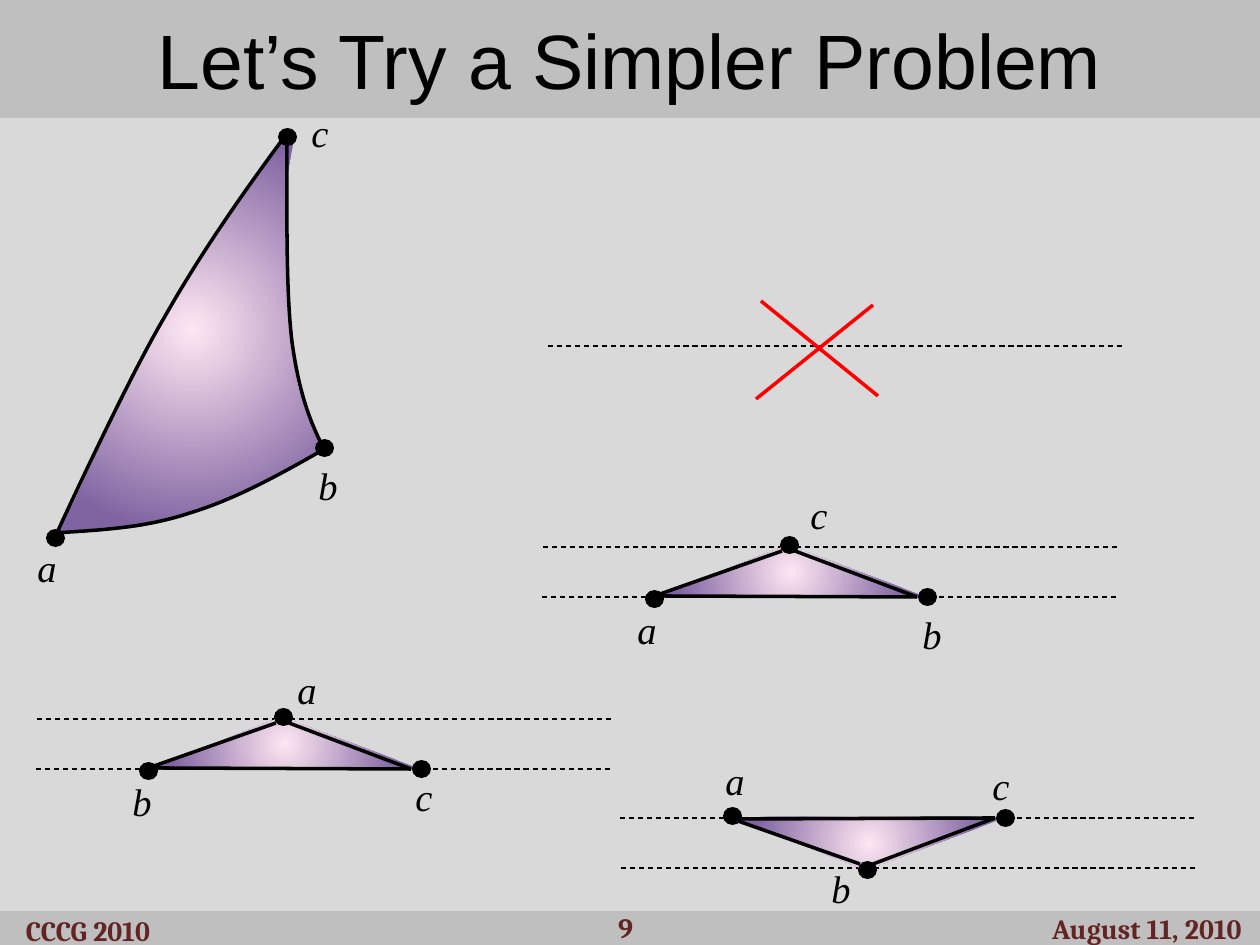
import dataclasses
import typing

import pptx
import pptx.dml.color
import pptx.enum.dml
import pptx.enum.shapes
import pptx.enum.text
import pptx.oxml
import pptx.oxml.ns
import pptx.util

RGB = pptx.dml.color.RGBColor
BLACK = RGB(0x00, 0x00, 0x00)
RED = RGB(0xFF, 0x00, 0x00)
PAPER = RGB(0xD9, 0xD9, 0xD9)
BAND = RGB(0xBF, 0xBF, 0xBF)
MAROON = RGB(0x63, 0x25, 0x23)
PINK = RGB(0xFE, 0xE7, 0xF2)
PURPLE = RGB(0x80, 0x64, 0xA2)

SCALE = 914400 / 126
WIDE, HIGH = 1260, 945
DASH = pptx.enum.dml.MSO_LINE.DASH
KIND = pptx.enum.shapes.MSO_SHAPE
ALIGN = pptx.enum.text.PP_ALIGN
MIDDLE = pptx.enum.text.MSO_ANCHOR.MIDDLE
SPACE = pptx.oxml.ns.nsdecls("a")
Point = tuple[int, int]


@dataclasses.dataclass(frozen=True)
class Label:
    text: str
    left: int
    top: int


@dataclasses.dataclass(frozen=True)
class Wedge:
    left: int
    base: int
    flip: int
    labels: tuple[Label, ...]


@dataclasses.dataclass(frozen=True)
class Note:
    text: str
    left: int
    top: int
    width: int
    height: int


WEDGES = (
    Wedge(653, 598, 1, (Label("a", 625, 600), Label("b", 910, 605), Label("c", 798, 485))),
    Wedge(147, 770, 1, (Label("b", 120, 772), Label("c", 403, 767), Label("a", 285, 660))),
    Wedge(731, 817, -1, (Label("a", 713, 751), Label("c", 980, 756), Label("b", 819, 859))),
)
NOTES = (
    Note("CCCG 2010", -42, 908, 260, 44),
    Note("August 11, 2010", 1002, 906, 290, 44),
)
NUMBER = Note(" 9", 512, 910, 221, 35)
BODY = (
    (286, 137), (270, 154), (213, 239), (188, 278), (163, 318), (154, 339), (135, 374),
    (117, 409), (92, 465), (79, 491), (66, 517), (62, 523), (58, 530),
    (55, 538), (55, 534), (60, 534), (68, 533), (76, 532), (84, 532),
    (98, 530), (120, 530), (139, 527), (159, 523), (179, 519), (203, 509),
    (228, 500), (266, 480), (286, 470), (306, 460), (318, 452), (324, 447),
    (329, 444), (323, 450), (320, 444), (316, 438), (311, 425), (306, 412),
    (302, 399), (297, 391), (294, 367), (290, 343), (287, 302), (286, 271),
    (285, 239), (287, 202), (287, 179), (289, 156), (302, 121), (286, 137),
)
CURVES = (
    ((285, 136), (243, 193), (202, 251), (164, 318), (125, 384), (55, 537), (55, 537)),
    ((55, 533), (101, 530), (145, 528), (190, 513), (236, 499), (281, 474), (328, 447)),
    ((323, 447), (310, 421), (299, 393), (292, 341), (286, 291), (287, 216), (287, 140)),
)
CORNERS = ((287, 137), (55, 538), (324, 448))
NAMES = (Label("a", 25, 538), Label("b", 306, 456), Label("c", 299, 103))


def px(size: float) -> pptx.util.Emu:
    return pptx.util.Emu(round(size * SCALE))


def bend(shape) -> None:
    tag = pptx.oxml.ns.qn("a:lnTo")
    steps = list(shape._element.spPr.iter(tag))
    for start in range(0, len(steps), 3):
        curve = pptx.oxml.parse_xml(f"<a:cubicBezTo {SPACE}/>")
        steps[start].addprevious(curve)
        for step in steps[start:start + 3]:
            curve.append(step[0])
            step.getparent().remove(step)


def add_path(slide, points: typing.Sequence[Point], close: bool, curved: bool):
    first, *rest = [(px(x), px(y)) for x, y in points]
    maker = slide.shapes.build_freeform(*first, scale=1.0)
    maker.add_line_segments(rest, close=close)
    shape = maker.convert_to_shape()
    shape.shadow.inherit = False
    if curved:
        bend(shape)
    return shape


def add_glow(slide, points: typing.Sequence[Point], curved: bool = False) -> None:
    shape = add_path(slide, points, True, curved)
    shape.line.fill.background()
    shape.fill.gradient()
    for stop, color, place in zip(shape.fill.gradient_stops, (PINK, PURPLE), (0, 0.82)):
        stop.color.rgb = color
        stop.position = place
    grad = shape._element.spPr.find(pptx.oxml.ns.qn("a:gradFill"))
    grad.replace(grad.find(pptx.oxml.ns.qn("a:lin")), pptx.oxml.parse_xml(
        f'<a:path {SPACE} path="circle">'
        '<a:fillToRect l="50000" t="50000" r="50000" b="50000"/></a:path>'))


def add_curve(slide, points: typing.Sequence[Point]) -> None:
    shape = add_path(slide, points, False, True)
    shape.fill.background()
    shape.line.color.rgb = BLACK
    shape.line.width = pptx.util.Pt(2)


def add_line(slide, start: Point, end: Point, color: RGB = BLACK, dashed: bool = False) -> None:
    line = slide.shapes.add_connector(
        pptx.enum.shapes.MSO_CONNECTOR.STRAIGHT, *map(px, (*start, *end)))
    line.line.color.rgb = color
    line.line.width = pptx.util.Pt(0.75 if dashed else 2)
    if dashed:
        line.line.dash_style = DASH
    line._element.spPr.append(pptx.oxml.parse_xml(f"<a:effectLst {SPACE}/>"))


def add_solid(slide, kind, box: tuple[int, ...], color: RGB) -> None:
    shape = slide.shapes.add_shape(kind, *map(px, box))
    shape.shadow.inherit = False
    shape.fill.solid()
    shape.fill.fore_color.rgb = color
    shape.line.fill.background()


def add_dot(slide, spot: Point) -> None:
    add_solid(slide, KIND.OVAL, (spot[0] - 9, spot[1] - 9, 19, 18), BLACK)


def style(line, name: str, size: int, color: RGB) -> None:
    line.font.name = name
    line.font.size = pptx.util.Pt(size)
    line.font.color.rgb = color


def add_label(slide, label: Label) -> None:
    frame = slide.shapes.add_textbox(*map(px, (label.left, label.top, 37, 59))).text_frame
    frame.word_wrap = True
    frame.text = label.text
    style(frame.paragraphs[0], "Times New Roman", 22, BLACK)
    frame.paragraphs[0].font.italic = True


def add_note(slide, note: Note, plain: bool = False) -> None:
    box = tuple(map(px, (note.left, note.top, note.width, note.height)))
    if plain:
        shape = slide.shapes.add_textbox(*box)
    else:
        shape = slide.shapes.add_shape(KIND.ROUNDED_RECTANGLE, *box)
        shape.shadow.inherit = False
        shape.fill.background()
        shape.line.fill.background()
    frame = shape.text_frame
    frame.word_wrap = True
    frame.vertical_anchor = MIDDLE
    frame.text = note.text
    line = frame.paragraphs[0]
    line.alignment = ALIGN.CENTER
    style(line, "Cambria", 16, MAROON)
    line.font.bold = True


def add_wedge(slide, wedge: Wedge) -> None:
    def at(x: int, y: int) -> Point:
        return wedge.left + x, wedge.base + wedge.flip * y

    for x, y in ((-110, -51), (-111, -1)):
        add_line(slide, at(x, y), at(x + 577, y), dashed=True)
    add_glow(slide, (at(0, 0), at(135, -53), at(276, 0)))
    for start, end in (((7, -4), (129, -47)), ((8, -2), (264, -1)), ((142, -47), (264, -1))):
        add_line(slide, at(*start), at(*end))
    for spot in ((1, 1), (136, -53), (274, -1)):
        add_dot(slide, at(*spot))
    for label in wedge.labels:
        add_label(slide, label)


def add_title(slide, text: str) -> None:
    title = slide.shapes.title
    title.left, title.top, title.width, title.height = map(px, (0, 0, WIDE, 118))
    title.fill.solid()
    title.fill.fore_color.rgb = BAND
    frame = title.text_frame
    frame.text = text
    frame.auto_size = pptx.enum.text.MSO_AUTO_SIZE.NONE
    frame.vertical_anchor = MIDDLE
    frame.paragraphs[0].alignment = ALIGN.CENTER
    style(frame.paragraphs[0], "Arial", 44, BLACK)


def main() -> None:
    deck = pptx.Presentation()
    deck.slide_width, deck.slide_height = px(WIDE), px(HIGH)
    slide = deck.slides.add_slide(deck.slide_layouts[5])
    slide.background.fill.solid()
    slide.background.fill.fore_color.rgb = PAPER
    add_title(slide, "Let’s Try a Simpler Problem")
    add_glow(slide, BODY, True)
    add_solid(slide, KIND.RECTANGLE, (0, 911, WIDE, 34), BAND)
    for note in NOTES:
        add_note(slide, note)
    for knots in CURVES:
        add_curve(slide, knots)
    for spot in CORNERS:
        add_dot(slide, spot)
    for label in NAMES:
        add_label(slide, label)
    add_line(slide, (548, 346), (1125, 346), dashed=True)
    add_line(slide, (756, 399), (873, 305), RED)
    add_line(slide, (878, 396), (761, 301), RED)
    for wedge in WEDGES:
        add_wedge(slide, wedge)
    add_note(slide, NUMBER, plain=True)
    deck.save("out.pptx")


if __name__ == "__main__":
    main()
